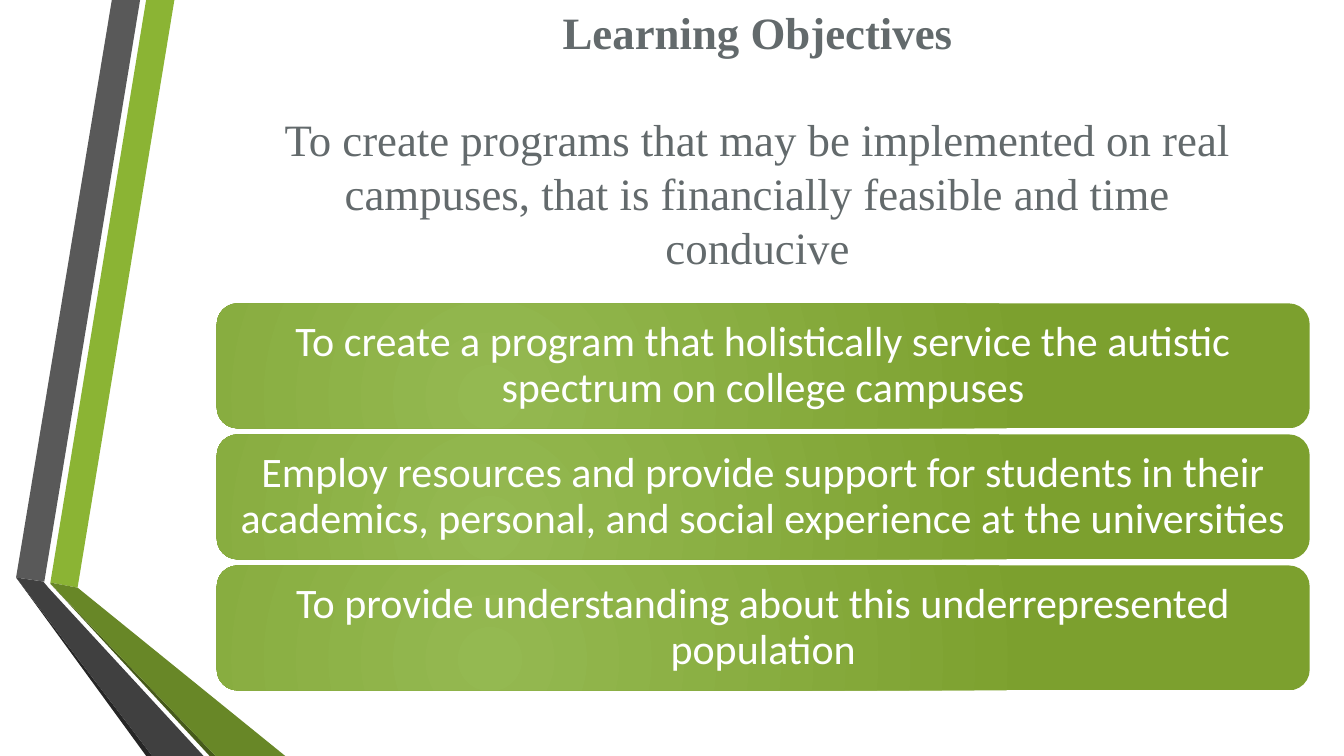
from dataclasses import dataclass

from lxml import etree
from pptx import Presentation
from pptx.dml.color import RGBColor
from pptx.enum.shapes import MSO_SHAPE
from pptx.enum.text import MSO_ANCHOR, PP_ALIGN
from pptx.oxml.ns import qn
from pptx.util import Inches, Pt

ROUNDED = MSO_SHAPE.ROUNDED_RECTANGLE
MIDDLE, TOP = MSO_ANCHOR.MIDDLE, MSO_ANCHOR.TOP
CENTER = PP_ALIGN.CENTER

COLORS = {
    "lime": "8BB434",
    "gray": "595959",
    "black": "262626",
    "moss": "465A1A",
    "olive": "688727",
    "charcoal": "404040",
    "glow": "94B951",
    "leaf": "7CA02E",
    "white": "FFFFFF",
    "slate": "636A6C",
}


@dataclass
class Ribbon:
    color: str
    points: list[tuple[float, float]]


RIBBONS = [
    Ribbon("lime", [(0.5, 5.78), (0.77, 5.83), (1.73, 0), (1.45, 0)]),
    Ribbon("gray", [(1.39, 0), (1.11, 0), (0.16, 5.73), (0.44, 5.77)]),
    Ribbon("black", [(0.16, 5.73), (1.45, 7.5), (1.51, 7.5)]),
    Ribbon("moss", [(0.5, 5.79), (2.08, 7.5), (2.14, 7.5)]),
    Ribbon("olive", [(0.5, 5.79), (2.14, 7.5), (2.83, 7.5), (0.77, 5.83), (0.5, 5.78)]),
    Ribbon("charcoal", [(2.02, 7.5), (0.48, 5.83), (0.43, 5.77), (0.16, 5.73), (1.51, 7.5)]),
]

OBJECTIVES = [
    "To create a program that holistically service the autistic spectrum on college campuses",
    "Employ resources and provide support for students in their academics, personal, "
    "and social experience at the universities",
    "To provide understanding about this underrepresented population",
]
OBJECTIVE_TOP, OBJECTIVE_PITCH = 3.01, 1.3

HEADING = "Learning Objectives"
GOAL = (
    "To create programs that may be implemented on real campuses, "
    "that is financially feasible and time conducive"
)

OBJECTIVE_FONT = {"name": "Calibri", "size": Pt(30)}
TITLE_FONT = {"name": "Times New Roman", "size": Pt(32)}
OBJECTIVE_FRAME = {
    "word_wrap": True,
    "vertical_anchor": MIDDLE,
    "margin_left": Inches(0.12),
    "margin_right": Inches(0.12),
    "margin_top": Inches(0.06),
    "margin_bottom": Inches(0.06),
}
TITLE_FRAME = {"word_wrap": True, "vertical_anchor": TOP}


def rgb(color: str) -> RGBColor:
    return RGBColor.from_string(COLORS[color])


def apply_format(target, values: dict) -> None:
    for attribute, value in values.items():
        setattr(target, attribute, value)


def write_paragraph(paragraph, text: str, font: dict, color: str) -> None:
    paragraph.alignment = CENTER
    run = paragraph.add_run()
    run.text = text
    apply_format(run.font, font)
    run.font.color.rgb = rgb(color)


def draw_ribbon(shapes, ribbon: Ribbon) -> None:
    points = [(Inches(x), Inches(y)) for x, y in ribbon.points]
    builder = shapes.build_freeform(*points[0])
    builder.add_line_segments(points[1:], close=True)
    shape = builder.convert_to_shape()
    shape.shadow.inherit = False
    shape.fill.solid()
    shape.fill.fore_color.rgb = rgb(ribbon.color)
    shape.line.fill.background()


def fill_with_glow(shape) -> None:
    """Radial gradient centred left of the middle, in the lower half."""
    shape.fill.gradient()
    for stop, color, position in zip(shape.fill.gradient_stops, ("glow", "leaf"), (0, 1)):
        stop.color.rgb = rgb(color)
        stop.position = position
    gradient = shape.fill._xPr.find(qn("a:gradFill"))
    gradient.remove(gradient.find(qn("a:lin")))
    circle = etree.Element(qn("a:path"), {"path": "circle"})
    focus = {"l": "50000", "t": "100000", "r": "100000", "b": "50000"}
    etree.SubElement(circle, qn("a:fillToRect"), focus)
    gradient.find(qn("a:gsLst")).addnext(circle)


def draw_objective(shapes, top: float, text: str) -> None:
    bar = shapes.add_shape(ROUNDED, Inches(2.15), Inches(top), Inches(10.84), Inches(1.24))
    bar.shadow.inherit = False
    fill_with_glow(bar)
    bar.line.fill.background()
    apply_format(bar.text_frame, OBJECTIVE_FRAME)
    paragraph = bar.text_frame.paragraphs[0]
    paragraph.line_spacing = 0.9
    write_paragraph(paragraph, text, OBJECTIVE_FONT, "white")


def draw_title(shapes) -> None:
    title = shapes.add_textbox(Inches(2.58), 0, Inches(9.87), Inches(3.1))
    frame = title.text_frame
    apply_format(frame, TITLE_FRAME)
    heading = frame.paragraphs[0]
    write_paragraph(heading, HEADING, TITLE_FONT | {"bold": True}, "slate")
    heading.space_after = Pt(38)
    write_paragraph(frame.add_paragraph(), GOAL, TITLE_FONT, "slate")


def main() -> None:
    deck = Presentation()
    deck.slide_width, deck.slide_height = Inches(13.33), Inches(7.5)
    shapes = deck.slides.add_slide(deck.slide_layouts[6]).shapes
    for ribbon in RIBBONS:
        draw_ribbon(shapes, ribbon)
    for index, text in enumerate(OBJECTIVES):
        draw_objective(shapes, OBJECTIVE_TOP + index * OBJECTIVE_PITCH, text)
    draw_title(shapes)
    deck.save("out.pptx")


if __name__ == "__main__":
    main()
